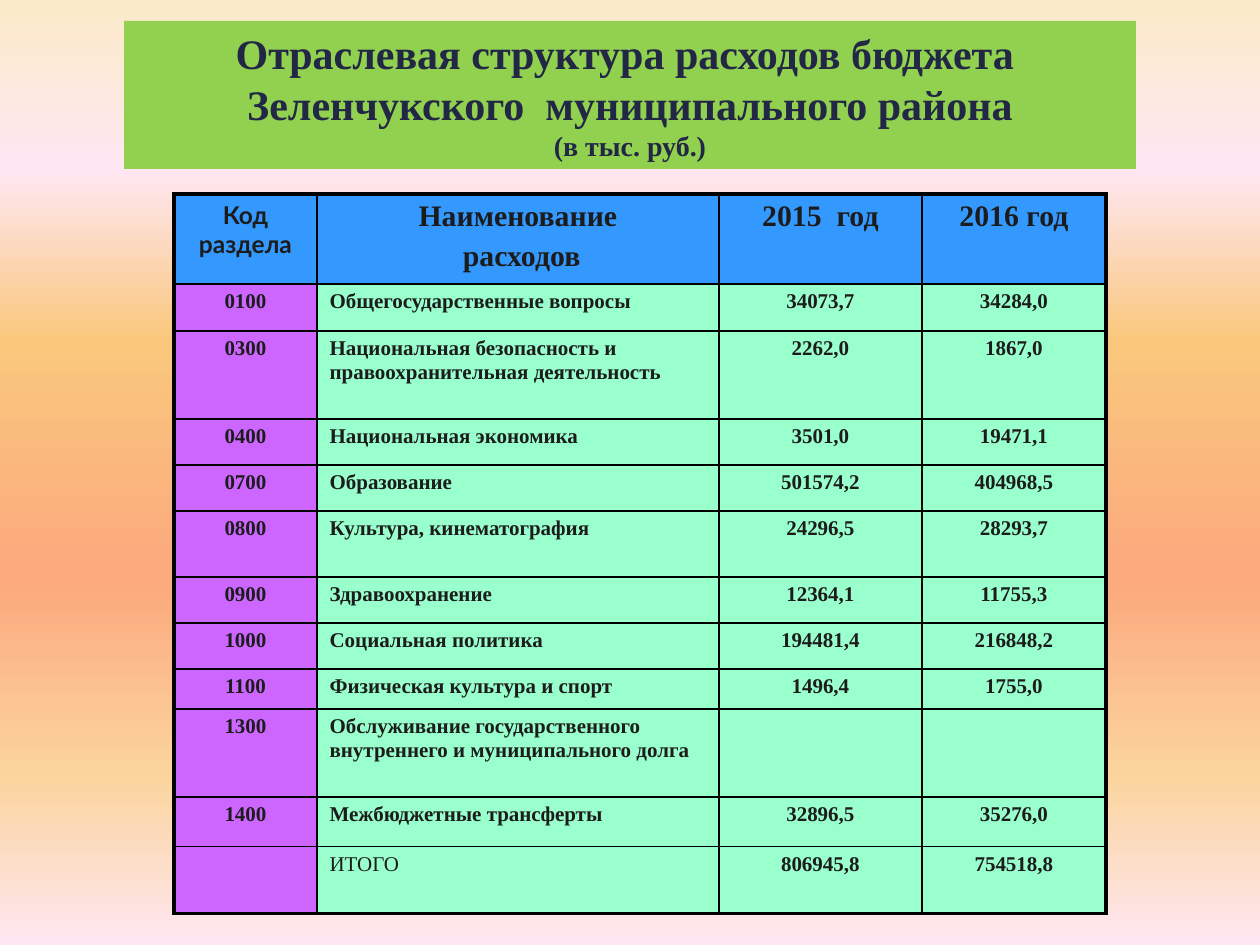
from lxml import etree
from pptx import Presentation
from pptx.dml.color import RGBColor
from pptx.enum.shapes import MSO_SHAPE
from pptx.enum.text import MSO_ANCHOR, PP_ALIGN
from pptx.oxml.ns import qn
from pptx.util import Emu, Pt

RECTANGLE = MSO_SHAPE.RECTANGLE
MIDDLE = MSO_ANCHOR.MIDDLE
LEFT, CENTER = PP_ALIGN.LEFT, PP_ALIGN.CENTER
EMU_PER_PX = 914400 / 126

SERIF, SANS = "Times New Roman", "Lato"
TITLE_COLOR, TEXT_COLOR, BORDER = "212745", "1C1C1C", "000000"
TITLE_FILL, HEADER_FILL, CODE_FILL, BODY_FILL = "92D050", "3399FF", "CC66FF", "99FFCC"
BACKGROUND_STOPS = [(0, "FBEAC7"), (18, "FEE7F2"), (36, "FAC77D"),
                    (61, "FBA97D"), (82, "FBD49C"), (100, "FEE7F2")]
THIN, THICK = 1, 2.25

TITLE = [("Отраслевая структура расходов бюджета ", 24),
         ("Зеленчукского  муниципального района", 24),
         ("(в тыс. руб.)", 16)]
COLUMN_WIDTHS = [143, 402, 203, 184]
HEADER_HEIGHT = 90
HEADERS = [(["Код раздела"], 14, SANS), (["Наименование", " расходов"], 17, SERIF),
           (["2015  год"], 17, SERIF), (["2016 год"], 17, SERIF)]
EXPENSES = [
    (47, "0100", "Общегосударственные вопросы", "34073,7", "34284,0"),
    (88, "0300", "Национальная безопасность и правоохранительная деятельность",
     "2262,0", "1867,0"),
    (46, "0400", "Национальная экономика", "3501,0", "19471,1"),
    (46, "0700", "Образование", "501574,2", "404968,5"),
    (66, "0800", "Культура, кинематография", "24296,5", "28293,7"),
    (46, "0900", "Здравоохранение", "12364,1", "11755,3"),
    (46, "1000", "Социальная политика", "194481,4", "216848,2"),
    (40, "1100", "Физическая культура и спорт", "1496,4", "1755,0"),
    (88, "1300", "Обслуживание государственного внутреннего и муниципального долга", "", ""),
    (50, "1400", "Межбюджетные трансферты", "32896,5", "35276,0"),
    (67, "", "ИТОГО", "806945,8", "754518,8"),
]


def px(length):
    """Turn pixels into EMU."""
    return Emu(round(length * EMU_PER_PX))


def color(value):
    """Turn a hex string into a colour."""
    return RGBColor.from_string(value)


def write(paragraph, text, size=12, font=SERIF, fill=TEXT_COLOR, bold=True, align=CENTER):
    """Write one formatted run into a paragraph."""
    paragraph.alignment = align
    run = paragraph.add_run()
    run.text = text
    run.font.size = Pt(size)
    run.font.name = font
    run.font.bold = bold
    run.font.color.rgb = color(fill)


def paragraph_at(frame, index):
    """Return the first paragraph of a frame or a new one."""
    return frame.add_paragraph() if index else frame.paragraphs[0]


def set_space_before(paragraph, percent):
    """Set the space before a paragraph as a share of its line."""
    spacing = etree.SubElement(paragraph._p.get_or_add_pPr(), qn("a:spcBef"))
    etree.SubElement(spacing, qn("a:spcPct"), val=str(percent * 1000))


def set_border(cell, side, width):
    """Draw one side of a table cell."""
    line = etree.Element(qn(f"a:ln{side}"), w=str(Pt(width)))
    solid = etree.SubElement(line, qn("a:solidFill"))
    etree.SubElement(solid, qn("a:srgbClr"), val=BORDER)
    return line


def set_borders(cell, edges):
    """Draw all cell sides, with thick lines on the outer edges."""
    properties = cell._tc.get_or_add_tcPr()
    for index, side in enumerate("LRTB"):
        properties.insert(index, set_border(cell, side, THICK if side in edges else THIN))


def fill_cell(cell, lines, fill, edges, **text_format):
    """Fill one table cell with colour, borders and paragraphs."""
    cell.fill.solid()
    cell.fill.fore_color.rgb = color(fill)
    set_borders(cell, edges)
    for index, line in enumerate(lines):
        if line:
            paragraph = paragraph_at(cell.text_frame, index)
            write(paragraph, line, **text_format)
            set_space_before(paragraph, 20)


def paint_background(slide):
    """Paint the vertical gradient behind the slide."""
    fill = slide.background.fill
    fill.gradient()
    fill.gradient_angle = 270
    stops = next(slide._element.iter(qn("a:gsLst")))
    stops.clear()
    for position, value in BACKGROUND_STOPS:
        stop = etree.SubElement(stops, qn("a:gs"), pos=str(position * 1000))
        etree.SubElement(stop, qn("a:srgbClr"), val=value)


def add_title(slide):
    """Add the title band."""
    shape = slide.shapes.add_shape(RECTANGLE, px(124), px(21), px(1012), px(148))
    shape.shadow.inherit = False
    shape.fill.solid()
    shape.fill.fore_color.rgb = color(TITLE_FILL)
    shape.line.fill.background()
    frame = shape.text_frame
    frame.word_wrap = True
    frame.vertical_anchor = MIDDLE
    for index, (text, size) in enumerate(TITLE):
        write(paragraph_at(frame, index), text, size=size, fill=TITLE_COLOR)


def add_expense_table(slide):
    """Add the table of expenses by budget section."""
    heights = [HEADER_HEIGHT] + [expense[0] for expense in EXPENSES]
    table = slide.shapes.add_table(
        len(heights), len(COLUMN_WIDTHS), px(174), px(194),
        px(sum(COLUMN_WIDTHS)), px(sum(heights))).table
    table.horz_banding = False
    for column, width in zip(table.columns, COLUMN_WIDTHS):
        column.width = px(width)
    for row, height in zip(table.rows, heights):
        row.height = px(height)

    side_edges = ["L", "", "", "R"]
    for column, (lines, size, font) in enumerate(HEADERS):
        fill_cell(table.cell(0, column), lines, HEADER_FILL, side_edges[column] + "T",
                  size=size, font=font)
    for row, (_, *values) in enumerate(EXPENSES, start=1):
        bottom = "B" if row == len(EXPENSES) else ""
        for column, value in enumerate(values):
            fill_cell(table.cell(row, column), [value],
                      BODY_FILL if column else CODE_FILL, side_edges[column] + bottom,
                      bold=not (bottom and column == 1),
                      align=LEFT if column == 1 else CENTER)


def main():
    """Build and save the slide."""
    presentation = Presentation()
    presentation.slide_width, presentation.slide_height = px(1260), px(945)
    slide = presentation.slides.add_slide(presentation.slide_layouts[6])
    paint_background(slide)
    add_title(slide)
    add_expense_table(slide)
    presentation.save("out.pptx")


if __name__ == "__main__":
    main()
